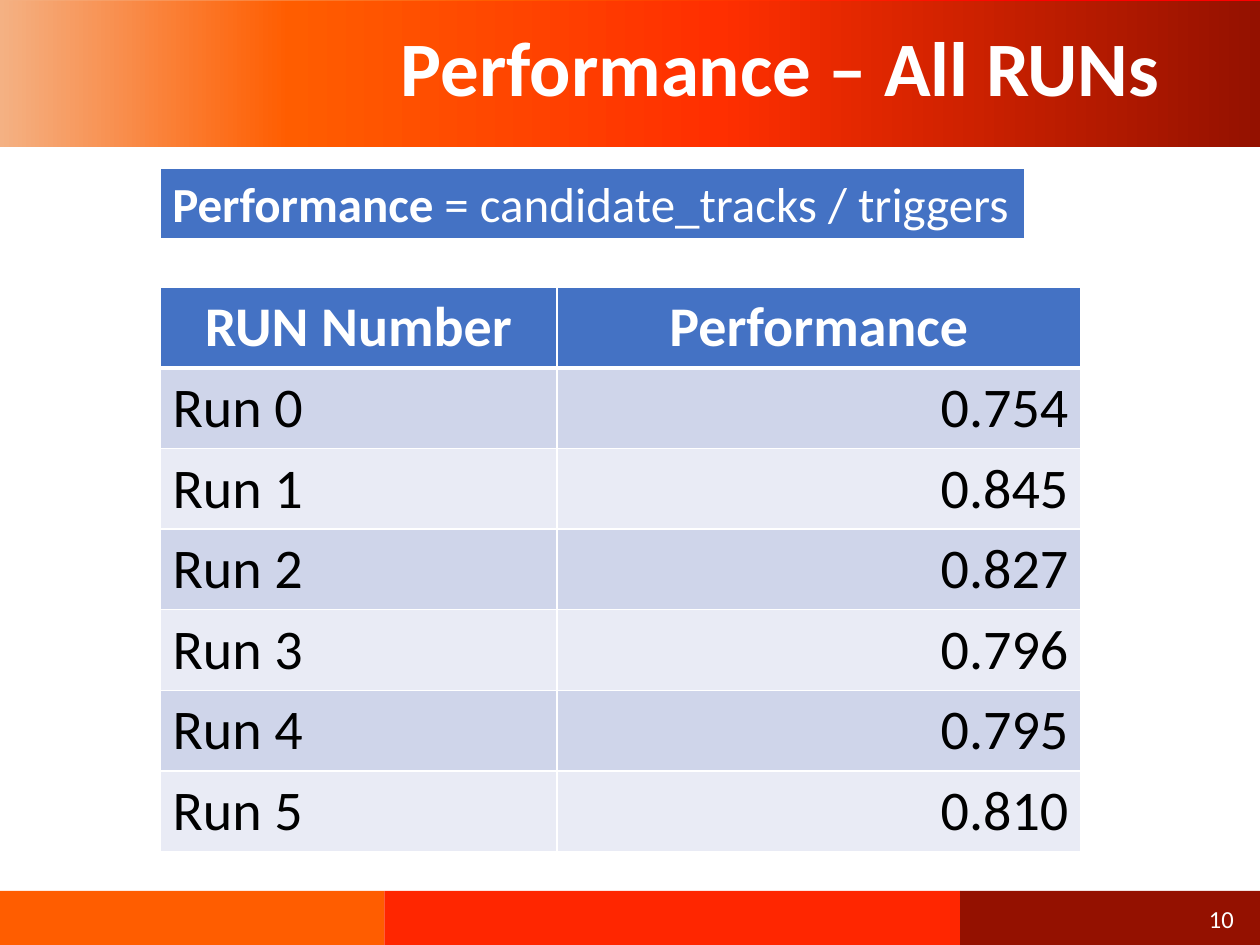
from dataclasses import dataclass

from lxml.etree import SubElement
from pptx import Presentation
from pptx.dml.color import RGBColor
from pptx.enum.shapes import MSO_SHAPE
from pptx.enum.text import MSO_ANCHOR, MSO_AUTO_SIZE, PP_ALIGN
from pptx.oxml.ns import qn
from pptx.util import Inches, Pt


@dataclass(frozen=True)
class Theme:
    font: str = "Calibri"
    white: str = "FFFFFF"
    black: str = "000000"
    blue: str = "4472C4"
    bands: tuple = ("CFD5EA", "E9EBF5")
    peach: str = "F4B183"
    orange: str = "FF5D00"
    pure_red: str = "FF0000"
    scarlet: str = "FF2F00"
    red: str = "FF2600"
    maroon: str = "941100"
    title_size: int = 44
    table_size: int = 32
    formula_size: int = 28
    number_size: int = 14


def write_text(frame, *spans, size, color, font, align=PP_ALIGN.LEFT,
               anchor=MSO_ANCHOR.MIDDLE, wrap=True, spacing=None):
    """Fill the first paragraph with (text, bold) spans."""
    frame.word_wrap = wrap
    frame.vertical_anchor = anchor
    para = frame.paragraphs[0]
    para.alignment = align
    if spacing:
        para.line_spacing = spacing
    for text, bold in spans:
        span = para.add_run()
        span.text = text
        span.font.name = font
        span.font.size = Pt(size)
        span.font.bold = bold
        span.font.color.rgb = RGBColor.from_string(color)


class PageBuilder:
    def __init__(self, page, theme):
        self.page = page
        self.theme = theme

    def rectangle(self, left, top, width, height, color=None):
        box = self.page.shapes.add_shape(
            MSO_SHAPE.RECTANGLE, Inches(left), Inches(top), Inches(width), Inches(height))
        box.shadow.inherit = False
        box.line.fill.background()
        if color:
            box.fill.solid()
            box.fill.fore_color.rgb = RGBColor.from_string(color)
        return box

    def gradient_band(self, left, top, width, height, stops, angle=0):
        box = self.rectangle(left, top, width, height)
        box.fill.gradient()
        box.fill.gradient_angle = angle
        stop_list = box._element.spPr.find(qn("a:gradFill")).find(qn("a:gsLst"))
        for old_stop in list(stop_list):
            stop_list.remove(old_stop)
        for percent, color in stops:
            stop = SubElement(stop_list, qn("a:gs"), pos=str(percent * 1000))
            SubElement(stop, qn("a:srgbClr"), val=color)

    def title(self, text, left, top, width, height):
        title = self.page.shapes.title
        title.left, title.top = Inches(left), Inches(top)
        title.width, title.height = Inches(width), Inches(height)
        title.text_frame.auto_size = MSO_AUTO_SIZE.NONE
        write_text(title.text_frame, (text, True), size=self.theme.title_size,
                   color=self.theme.white, font=self.theme.font,
                   align=PP_ALIGN.RIGHT, spacing=0.9)
        # Bring the title in front of the header bands
        self.page.shapes._spTree.append(title._element)

    def formula(self, left, top, width, height, *spans):
        box = self.rectangle(left, top, width, height, self.theme.blue)
        box.line.color.rgb = RGBColor.from_string(self.theme.white)
        box.line.width = Pt(1.5)
        write_text(box.text_frame, *spans, size=self.theme.formula_size,
                   color=self.theme.white, font=self.theme.font,
                   anchor=MSO_ANCHOR.TOP, wrap=False)

    def page_number(self, text, left, top, width, height):
        box = self.page.shapes.add_textbox(
            Inches(left), Inches(top), Inches(width), Inches(height))
        write_text(box.text_frame, (text, False), size=self.theme.number_size,
                   color=self.theme.white, font=self.theme.font, align=PP_ALIGN.RIGHT)

    def cell_borders(self, cell, **widths):
        properties = cell._tc.get_or_add_tcPr()
        for index, (side, points) in enumerate(widths.items()):
            line = SubElement(properties, qn(f"a:ln{side}"), w=str(Pt(points)))
            fill = SubElement(line, qn("a:solidFill"))
            SubElement(fill, qn("a:srgbClr"), val=self.theme.white)
            properties.insert(index, line)

    def table(self, left, top, column_widths, row_height, rows):
        theme = self.theme
        table = self.page.shapes.add_table(
            len(rows), len(column_widths), Inches(left), Inches(top),
            Inches(sum(column_widths)), Inches(row_height * len(rows))).table
        for column, width in zip(table.columns, column_widths):
            column.width = Inches(width)
        for row_index, values in enumerate(rows):
            header = row_index == 0
            table.rows[row_index].height = Inches(row_height)
            for column_index, value in enumerate(values):
                cell = table.cell(row_index, column_index)
                cell.fill.solid()
                cell.fill.fore_color.rgb = RGBColor.from_string(
                    theme.blue if header else theme.bands[(row_index - 1) % 2])
                if header:
                    align = PP_ALIGN.CENTER
                else:
                    align = PP_ALIGN.RIGHT if column_index else PP_ALIGN.LEFT
                write_text(cell.text_frame, (value, header), size=theme.table_size,
                           color=theme.white if header else theme.black,
                           font=theme.font, align=align, anchor=MSO_ANCHOR.TOP)
                self.cell_borders(cell, L=1, R=1, T=3 if row_index == 1 else 1,
                                  B=3 if header else 1)


def main():
    deck = Presentation()
    deck.slide_width, deck.slide_height = Inches(10), Inches(7.5)
    theme = Theme()
    builder = PageBuilder(deck.slides.add_slide(deck.slide_layouts[5]), theme)

    # Header bands and title
    builder.gradient_band(0, -0.01, 10, 1.16, [
        (0, theme.peach), (35, theme.orange), (74, theme.pure_red)], angle=315)
    builder.gradient_band(0, 0.01, 10, 1.16, [
        (0, theme.peach), (23, theme.orange), (57, theme.scarlet), (100, theme.maroon)])
    builder.title("Performance – All RUNs", 0.69, 0.01, 8.62, 1.11)

    # Footer strip
    left = 0
    for width, color in ((3.05, theme.orange), (4.57, theme.red), (2.38, theme.maroon)):
        builder.rectangle(left, 7.07, width, 0.45, color)
        left += width
    builder.page_number("10", 7.64, 7.09, 2.25, 0.4)

    # Results table and definition of performance
    scores = ("0.754", "0.845", "0.827", "0.796", "0.795", "0.810")
    rows = [("RUN Number", "Performance")]
    rows += [(f"Run {number}", score) for number, score in enumerate(scores)]
    builder.table(1.27, 2.28, (3.15, 4.16), 0.64, rows)
    builder.formula(1.27, 1.33, 6.87, 0.57,
                    ("Performance", True), (" = candidate_tracks / triggers", False))

    deck.save("out.pptx")


if __name__ == "__main__":
    main()
